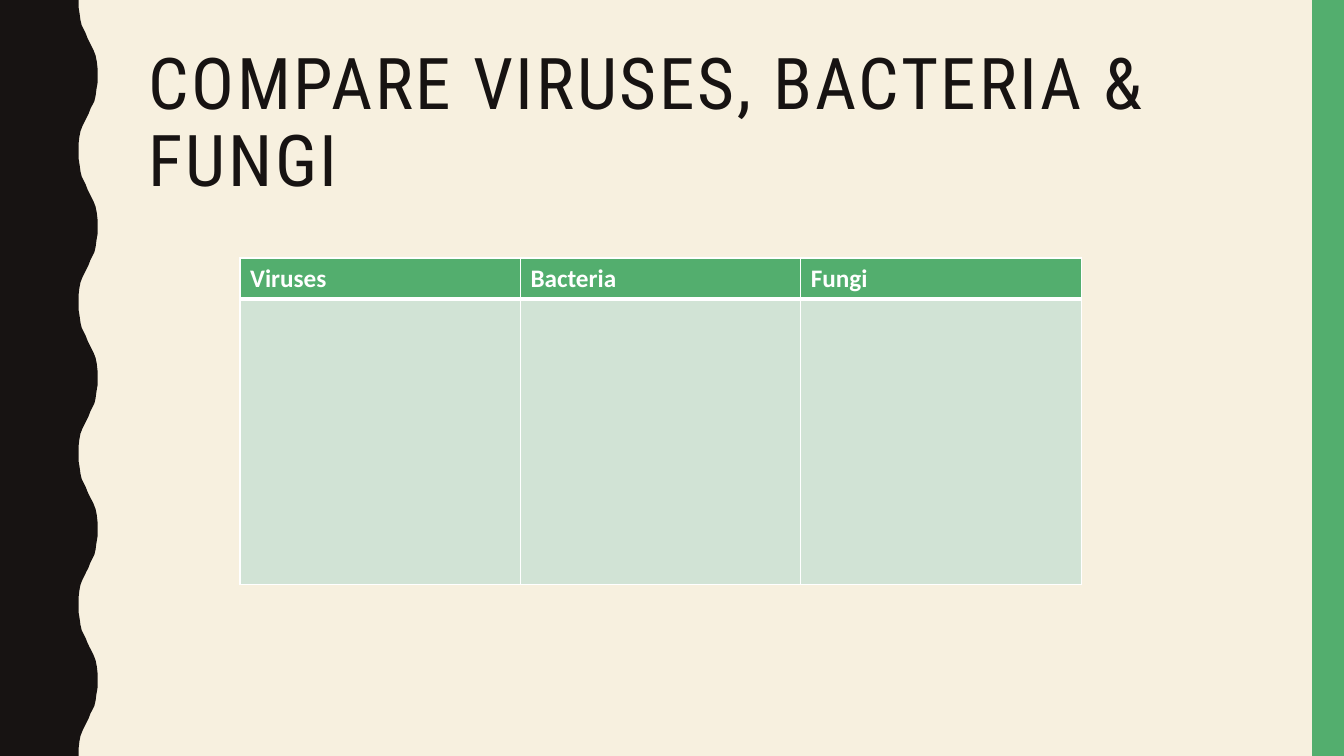
import pptx
import pptx.dml.color
import pptx.enum.shapes
import pptx.enum.text
import pptx.oxml
import pptx.oxml.ns
import pptx.util

Cm = pptx.util.Cm
Pt = pptx.util.Pt
RGBColor = pptx.dml.color.RGBColor

CREAM = RGBColor(0xF7, 0xF0, 0xDF)
INK = RGBColor(0x17, 0x13, 0x12)
GREEN = RGBColor(0x53, 0xAE, 0x6E)
PALE_GREEN = RGBColor(0xD1, 0xE3, 0xD5)
WHITE = RGBColor(0xFF, 0xFF, 0xFF)

PAGE_WIDTH, PAGE_HEIGHT = 33.87, 19.05
HALF_WAVES = 10
# Trough to crest of the wavy edge, as (across, down) in centimetres
HALF_WAVE = [
    (0, 0), (0, 0.18), (0.03, 0.36), (0.05, 0.51), (0.08, 0.64),
    (0.13, 0.74), (0.18, 0.84), (0.23, 0.97), (0.28, 1.07), (0.33, 1.17),
    (0.38, 1.27), (0.43, 1.4), (0.46, 1.55), (0.48, 1.73),
]
CREST = 0.48


def paint(shape, color):
    shape.fill.solid()
    shape.fill.fore_color.rgb = color
    shape.line.fill.background()
    shape.shadow.inherit = False


def add_wavy_band(page, left, top, width, height):
    """Fill the box with a band whose right edge swings between trough and crest."""
    trough = left + width - CREST
    step = height / HALF_WAVES
    edge = []
    for index in range(HALF_WAVES):
        for across, down in HALF_WAVE:
            if index % 2:
                across = CREST - across
            edge.append((Cm(trough + across), Cm(top + index * step + down)))
    edge.append((Cm(trough), Cm(top + height)))
    edge.append((Cm(left), Cm(top + height)))
    builder = page.shapes.build_freeform(Cm(left), Cm(top))
    builder.add_line_segments(edge, close=True)
    paint(builder.convert_to_shape(), INK)


def add_side_bar(page, left, top, width, height):
    bar = page.shapes.add_shape(
        pptx.enum.shapes.MSO_SHAPE.RECTANGLE,
        Cm(left), Cm(top), Cm(width), Cm(height))
    paint(bar, GREEN)


def place_title(page, text, left, top, width, height):
    title = page.shapes.title
    title.left, title.top = Cm(left), Cm(top)
    title.width, title.height = Cm(width), Cm(height)
    frame = title.text_frame
    frame.text = text
    frame.word_wrap = True
    frame.auto_size = pptx.enum.text.MSO_AUTO_SIZE.NONE
    frame.vertical_anchor = pptx.enum.text.MSO_ANCHOR.MIDDLE
    para = frame.paragraphs[0]
    para.alignment = pptx.enum.text.PP_ALIGN.LEFT
    para.line_spacing = 0.9
    para.font.name = "Roboto Condensed"
    para.font.size = Pt(51)
    para.font.color.rgb = INK
    letter_spacing = str(Pt(2).centipoints)
    para.runs[0].font._element.set("spc", letter_spacing)


def add_border(cell, side, points):
    properties = cell._tc.get_or_add_tcPr()
    properties.append(pptx.oxml.parse_xml(
        f'<a:ln{side} {pptx.oxml.ns.nsdecls("a")} w="{Pt(points)}">'
        f'<a:solidFill><a:srgbClr val="{WHITE}"/></a:solidFill></a:ln{side}>'))


def style_cell(cell, color, top_border, bottom_border):
    for side, points in zip("LRTB", (1, 1, top_border, bottom_border)):
        add_border(cell, side, points)
    cell.fill.solid()
    cell.fill.fore_color.rgb = color


def add_comparison_table(page, headings, left, top, width, height, header_height):
    """Add a heading row above one tall row of cells left open for answers."""
    frame = page.shapes.add_table(
        2, len(headings), Cm(left), Cm(top), Cm(width), Cm(height))
    table = frame.table
    for column in table.columns:
        column.width = Cm(width / len(headings))
    table.rows[0].height = Cm(header_height)
    table.rows[1].height = Cm(height - header_height)
    for index, heading in enumerate(headings):
        header = table.cell(0, index)
        header.text = heading
        font = header.text_frame.paragraphs[0].font
        font.name = "Calibri"
        font.size = Pt(18)
        font.bold = True
        font.color.rgb = WHITE
        style_cell(header, GREEN, 1, 3)
        style_cell(table.cell(1, index), PALE_GREEN, 3, 1)


def add_comparison_page(deck):
    page = deck.slides.add_slide(deck.slide_layouts[5])
    page.background.fill.solid()
    page.background.fill.fore_color.rgb = CREAM
    add_wavy_band(page, 0, 0, 2.46, PAGE_HEIGHT)
    add_side_bar(page, PAGE_WIDTH - 0.8, 0, 0.8, PAGE_HEIGHT)
    place_title(page, "COMPARE VIRUSES, BACTERIA & FUNGI", 3.48, 1.07, 28.27, 4.14)
    add_comparison_table(
        page, ["Viruses", "Bacteria", "Fungi"], 6.05, 6.5, 21.2, 8.23, 1.03)


def main():
    deck = pptx.Presentation()
    deck.slide_width, deck.slide_height = Cm(PAGE_WIDTH), Cm(PAGE_HEIGHT)
    add_comparison_page(deck)
    deck.save("out.pptx")


if __name__ == "__main__":
    main()
